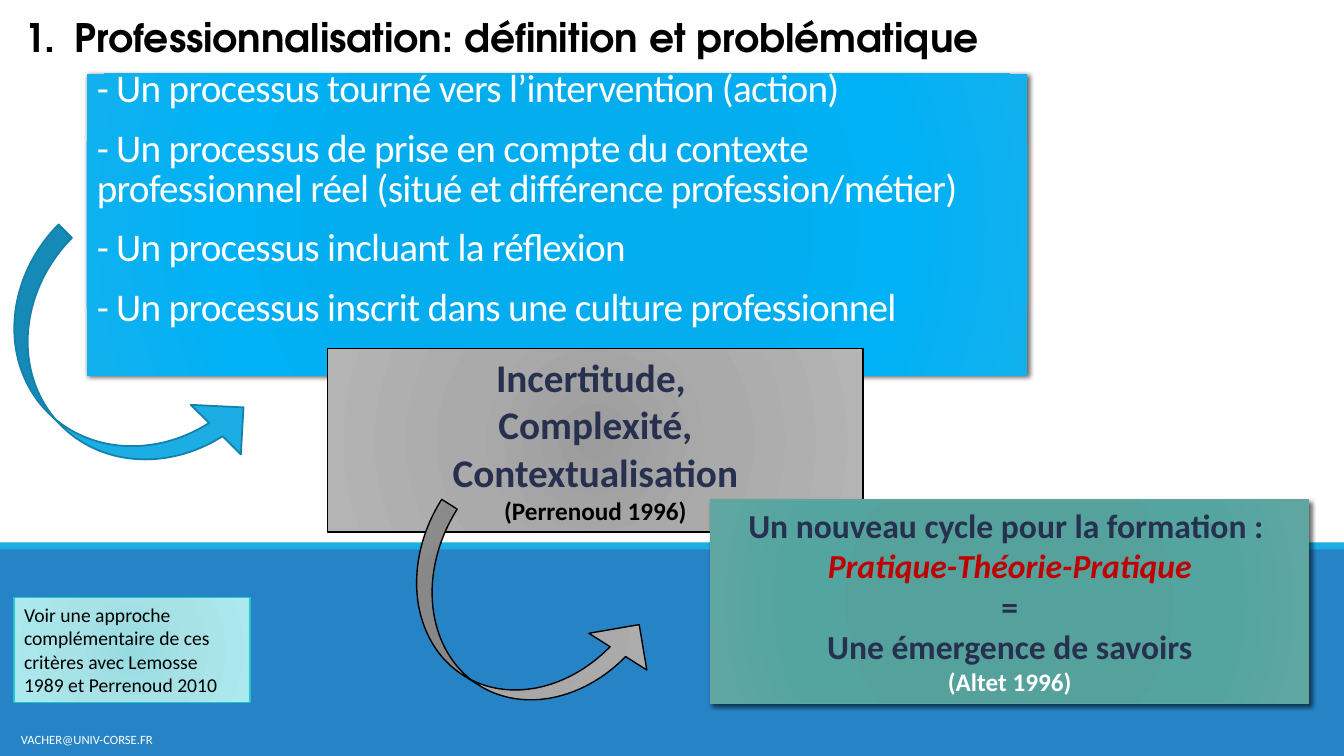
from lxml import etree
from pptx import Presentation
from pptx.dml.color import RGBColor
from pptx.enum.shapes import MSO_SHAPE as Preset
from pptx.enum.text import MSO_ANCHOR as Anchor, MSO_AUTO_SIZE as AutoSize, PP_ALIGN as Align
from pptx.oxml.ns import qn
from pptx.util import Inches, Pt

COLORS = {
    "band": "2683C6", "stripe": "1CADE4", "arrow_edge": "1580A9",
    "white": "FFFFFF", "black": "000000", "navy": "27304E", "red": "C00000",
    "green_edge": "62A39F", "note_edge": "28C4CC",
}
GRADIENTS = {
    "blue": [(0, "00ADEF"), (34, "03ADEE"), (70, "00B1F5"), (100, "12B1EE")],
    "grey": [(0, "9C9C9C"), (45, "AAAAAA"), (100, "B4B4B4")],
    "green": [(0, "52A19C"), (34, "55A19C"), (70, "54A5A0"), (100, "5FA6A2")],
    "note": [(0, "95DBE0"), (45, "A7E2E7"), (100, "ACE9EE")],
}


def paint(shape, fill, edge=None, width=1, blur=None):
    shape.shadow.inherit = False
    if fill in GRADIENTS:
        shape.fill.gradient()
        gradient = shape._element.spPr.find(qn("a:gradFill"))
        for child in list(gradient):
            gradient.remove(child)
        stops = etree.SubElement(gradient, qn("a:gsLst"))
        for position, color in GRADIENTS[fill]:
            stop = etree.SubElement(stops, qn("a:gs"), pos=str(position * 1000))
            etree.SubElement(stop, qn("a:srgbClr"), val=color)
        circle = etree.SubElement(gradient, qn("a:path"), path="circle")
        etree.SubElement(circle, qn("a:fillToRect"), {side: "100000" for side in "ltrb"})
    else:
        shape.fill.solid()
        shape.fill.fore_color.rgb = RGBColor.from_string(COLORS[fill])
    if edge:
        shape.line.color.rgb = RGBColor.from_string(COLORS[edge])
        shape.line.width = Pt(width)
    else:
        shape.line.fill.background()
    if blur:
        effects = shape._element.spPr.find(qn("a:effectLst"))
        shadow = etree.SubElement(effects, qn("a:outerShdw"), blurRad=str(Pt(blur)),
                                  dist=str(Pt(2)), dir="2700000", algn="tl", rotWithShape="0")
        tone = etree.SubElement(shadow, qn("a:srgbClr"), val=COLORS["black"])
        etree.SubElement(tone, qn("a:alpha"), val="60000")


def write(shape, lines, align=Align.LEFT, anchor=Anchor.TOP, font="Calibri"):
    frame = shape.text_frame
    frame.word_wrap = True
    frame.auto_size = AutoSize.NONE
    frame.vertical_anchor = anchor
    frame.text = "\n".join(line[0] for line in lines)
    for para, (_, size, color, bold, italic) in zip(frame.paragraphs, lines):
        para.alignment = align
        span = para.runs[0]
        span.font.name = font
        span.font.size = Pt(size)
        span.font.bold = bold
        span.font.italic = italic
        span.font.color.rgb = RGBColor.from_string(COLORS[color])


deck = Presentation()
deck.slide_width, deck.slide_height = Inches(13.33), Inches(7.5)
page = deck.slides.add_slide(deck.slide_layouts[1])
shapes = page.shapes

for top, height, color in [(5.42, 2.08, "band"), (5.38, 0.07, "stripe")]:
    band = shapes.add_shape(Preset.RECTANGLE, 0, Inches(top), deck.slide_width, Inches(height))
    paint(band, color)

heading = shapes.title
heading.left, heading.top, heading.width, heading.height = map(Inches, (0.14, 0.08, 12.97, 0.57))
write(heading, [("Professionnalisation: définition et problématique", 28, "black", True, False)],
      font="TeX Gyre Adventor")
numbering = heading.text_frame.paragraphs[0]._p.get_or_add_pPr()
numbering.set("marL", str(Inches(0.5)))
numbering.set("indent", str(Inches(-0.5)))
etree.SubElement(numbering, qn("a:buFont"), typeface="+mj-lt")
etree.SubElement(numbering, qn("a:buAutoNum"), type="arabicPeriod")

criteria = page.placeholders[1]
criteria.left, criteria.top, criteria.width, criteria.height = map(Inches, (0.86, 0.73, 9.33, 3))
paint(criteria, "blue", blur=3.5)
write(criteria, [(text, 28, "white", False, False) for text in (
    "- Un processus tourné vers l’intervention (action)",
    "- Un processus de prise en compte du contexte professionnel réel "
    "(situé et différence profession/métier)",
    "- Un processus incluant la réflexion",
    "- Un processus inscrit dans une culture professionnel",
)], anchor=Anchor.BOTTOM)
criteria.text_frame.margin_top = 0
criteria.text_frame.margin_bottom = Inches(0.46)
for index, para in enumerate(criteria.text_frame.paragraphs):
    para.line_spacing = 0.85
    para.space_before = Pt(14 if index else 0)
    para.space_after = Pt(0)
    properties = para._p.get_or_add_pPr()
    properties.set("marL", "0")
    properties.set("indent", "0")
    etree.SubElement(properties, qn("a:buNone"))
    para.runs[0].font._element.set("spc", "-50")

address = shapes.add_textbox(Inches(0), Inches(7.17), Inches(1.72), Inches(0.33))
write(address, [("VACHER@UNIV-CORSE.FR", 9, "white", False, False)], Align.CENTER, Anchor.MIDDLE)

boxes = [
    ((3.25, 3.46, 5.31, 1.82), "grey", "black", None, Align.CENTER, [
        ("Incertitude, ", 28, "navy", True, False),
        ("Complexité,", 28, "navy", True, False),
        ("Contextualisation", 28, "navy", True, False),
        ("(Perrenoud 1996)", 18, "black", True, False),
    ]),
    ((7.05, 4.96, 5.93, 2.02), "green", "green_edge", 3, Align.CENTER, [
        ("Un nouveau cycle pour la formation : ", 24, "navy", True, False),
        ("Pratique-Théorie-Pratique", 24, "red", True, True),
        ("=", 24, "navy", True, False),
        ("Une émergence de savoirs", 24, "navy", True, False),
        ("(Altet 1996)", 18, "white", True, False),
    ]),
    ((0.14, 5.93, 2.34, 1.04), "note", "note_edge", None, Align.LEFT, [
        ("Voir une approche complémentaire de ces critères avec Lemosse 1989 et Perrenoud 2010",
         14, "black", False, False),
    ]),
]
for place, fill, edge, blur, align, lines in boxes:
    box = shapes.add_shape(Preset.RECTANGLE, *map(Inches, place))
    paint(box, fill, edge, blur=blur)
    write(box, lines, align)

arrows = [
    ((0.43, 2.29, 1.4, 2.93), 314.7, "stripe", "arrow_edge", 1.25),
    ((4.46, 4.91, 1.36, 2.66), 302.4, "grey", "black", 1),
]
for place, angle, fill, edge, width in arrows:
    arrow = shapes.add_shape(Preset.CURVED_RIGHT_ARROW, *map(Inches, place))
    arrow.rotation = angle
    for index, value in enumerate((0.134, 0.5, 0.25)):
        arrow.adjustments[index] = value
    paint(arrow, fill, edge, width)

deck.save("out.pptx")
